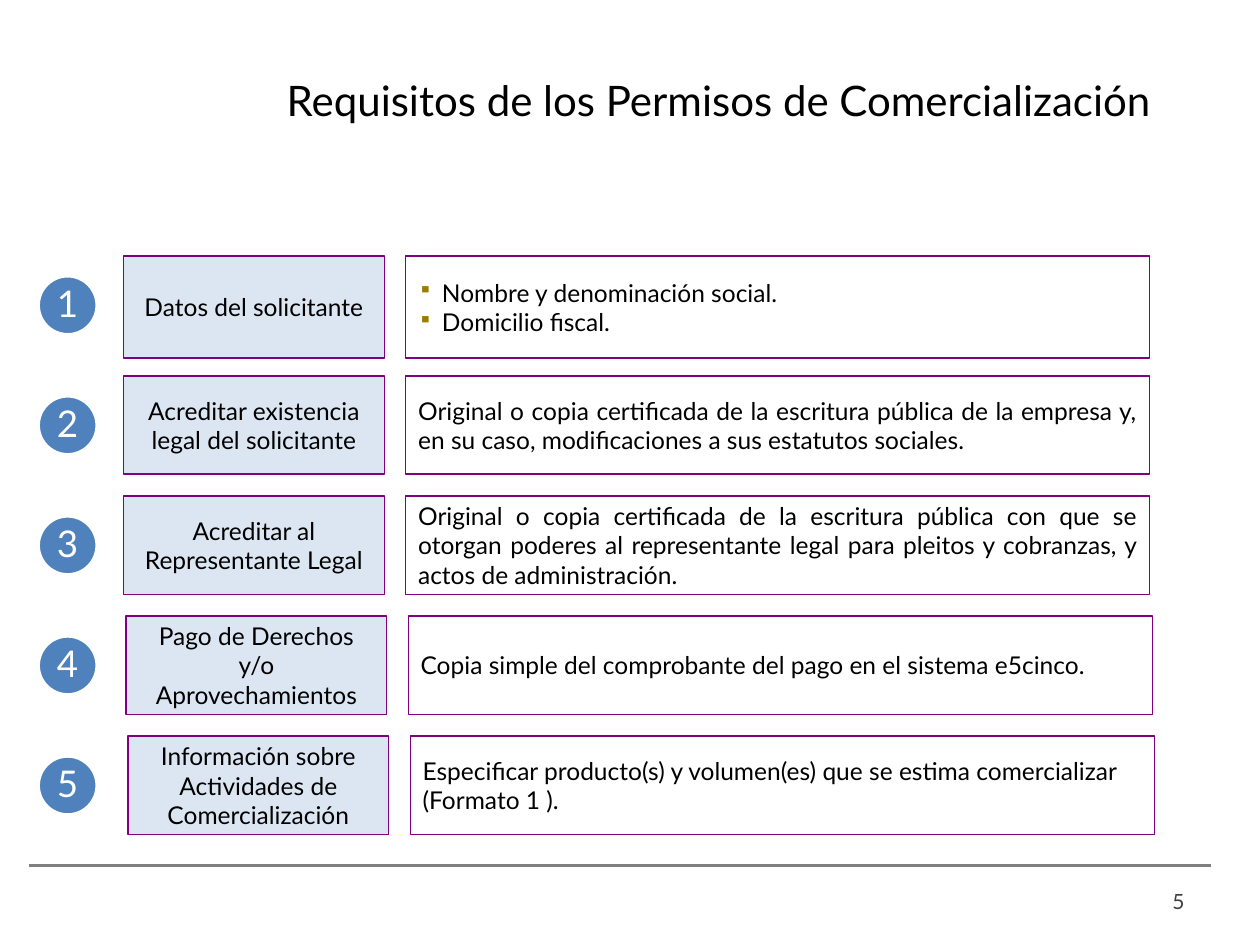
from dataclasses import dataclass

import lxml.etree
import pptx
import pptx.dml.color
import pptx.enum.shapes
import pptx.enum.text
import pptx.oxml.ns
import pptx.util

Cm = pptx.util.Cm
Pt = pptx.util.Pt
Align = pptx.enum.text.PP_ALIGN
Shape = pptx.enum.shapes.MSO_SHAPE

FONT = "Lato"
FIRST_TOP = 5.16
ROW_PITCH = 2.42
BOX_HEIGHT = 1.98
LABEL_LEFT, LABEL_WIDTH = 2.49, 5.26
DETAIL_LEFT, DETAIL_WIDTH = 8.18, 15.0
CIRCLE_LEFT, CIRCLE_SIZE, CIRCLE_DROP = 0.77, 1.19, 0.4


@dataclass
class Requirement:
    label: str
    details: list[str]
    bulleted: bool = False
    height: float = BOX_HEIGHT
    shift: float = 0


REQUIREMENTS = [
    Requirement("Datos del solicitante",
                ["Nombre y denominación social.", "Domicilio fiscal."],
                bulleted=True, height=2.06),
    Requirement("Acreditar existencia legal del solicitante",
                ["Original o copia certificada de la escritura pública de la empresa y, "
                 "en su caso, modificaciones a sus estatutos sociales."]),
    Requirement("Acreditar al Representante Legal",
                ["Original o copia certificada de la escritura pública con que se otorgan "
                 "poderes al representante legal para pleitos y cobranzas, y actos de "
                 "administración."]),
    Requirement("Pago de Derechos y/o Aprovechamientos",
                ["Copia simple del comprobante del pago en el sistema e5cinco."], shift=0.05),
    Requirement("Información sobre Actividades de Comercialización",
                ["Especificar producto(s) y volumen(es) que se estima comercializar",
                 "(Formato 1 )."], shift=0.09),
]


def color(value: str):
    return pptx.dml.color.RGBColor.from_string(value)


def add_bullet(paragraph) -> None:
    properties = paragraph._p.get_or_add_pPr()
    properties.set("marL", str(Cm(0.48)))
    properties.set("indent", str(-Cm(0.48)))
    qn = pptx.oxml.ns.qn
    bullet_color = lxml.etree.SubElement(properties, qn("a:buClr"))
    lxml.etree.SubElement(bullet_color, qn("a:srgbClr"), val="997D00")
    lxml.etree.SubElement(properties, qn("a:buSzPct"), val="80000")
    lxml.etree.SubElement(properties, qn("a:buChar"), char="▪")


def write_text(shape, lines: list[str], size: float = 14, ink: str = "000000",
               align=Align.CENTER, bulleted: bool = False, inset: float | None = None,
               spacing: float | None = None) -> None:
    frame = shape.text_frame
    frame.word_wrap = True
    frame.vertical_anchor = pptx.enum.text.MSO_ANCHOR.MIDDLE
    if inset is not None:
        frame.margin_left = frame.margin_right = Cm(inset)
        frame.margin_top = frame.margin_bottom = Cm(inset)
    for index, line in enumerate(lines):
        paragraph = frame.add_paragraph() if index else frame.paragraphs[0]
        paragraph.alignment = align
        if spacing:
            paragraph.line_spacing = spacing
        if bulleted:
            add_bullet(paragraph)
        run = paragraph.add_run()
        run.text = line
        run.font.name = FONT
        run.font.size = Pt(size)
        run.font.color.rgb = color(ink)


def add_box(slide, kind, left: float, top: float, width: float, height: float,
            fill: str | None, line: str, line_width: float):
    shape = slide.shapes.add_shape(kind, Cm(left), Cm(top), Cm(width), Cm(height))
    shape.shadow.inherit = False
    if fill:
        shape.fill.solid()
        shape.fill.fore_color.rgb = color(fill)
    else:
        shape.fill.background()
    shape.line.color.rgb = color(line)
    shape.line.width = Pt(line_width)
    return shape


def add_requirement(slide, number: int, requirement: Requirement) -> None:
    top = FIRST_TOP + (number - 1) * ROW_PITCH
    label = add_box(slide, Shape.RECTANGLE, LABEL_LEFT + requirement.shift, top,
                    LABEL_WIDTH, requirement.height, "DCE6F2", "800080", 0.75)
    write_text(label, [requirement.label])
    detail = add_box(slide, Shape.RECTANGLE, DETAIL_LEFT + requirement.shift, top,
                     DETAIL_WIDTH, requirement.height, None, "800080", 0.75)
    write_text(detail, requirement.details, align=Align.JUSTIFY,
               bulleted=requirement.bulleted)
    circle = add_box(slide, Shape.OVAL, CIRCLE_LEFT, top + CIRCLE_DROP,
                     CIRCLE_SIZE, CIRCLE_SIZE, "4F81BD", "FFFFFF", 2)
    write_text(circle, [str(number)], size=21, ink="FFFFFF", inset=0, spacing=0.9)


def add_footer(slide) -> None:
    rule = slide.shapes.add_connector(pptx.enum.shapes.MSO_CONNECTOR.STRAIGHT,
                                      Cm(0.58), Cm(17.45), Cm(24.41), Cm(17.45))
    rule.line.color.rgb = color("808080")
    rule.line.width = Pt(1.5)
    lxml.etree.SubElement(rule._element.spPr, pptx.oxml.ns.qn("a:effectLst"))
    page = slide.shapes.add_textbox(Cm(18.21), Cm(17.65), Cm(5.92), Cm(1.02))
    write_text(page, ["5"], size=12, ink="404040", align=Align.RIGHT)


def main() -> None:
    presentation = pptx.Presentation()
    presentation.slide_width, presentation.slide_height = Cm(25.4), Cm(19.05)
    slide = presentation.slides.add_slide(presentation.slide_layouts[5])
    title = slide.shapes.title
    title.left, title.top, title.width, title.height = Cm(4.72), Cm(0.36), Cm(19.53), Cm(3.3)
    write_text(title, ["Requisitos de los Permisos de Comercialización"], size=24)
    for number, requirement in enumerate(REQUIREMENTS, start=1):
        add_requirement(slide, number, requirement)
    add_footer(slide)
    presentation.save("out.pptx")


if __name__ == "__main__":
    main()
